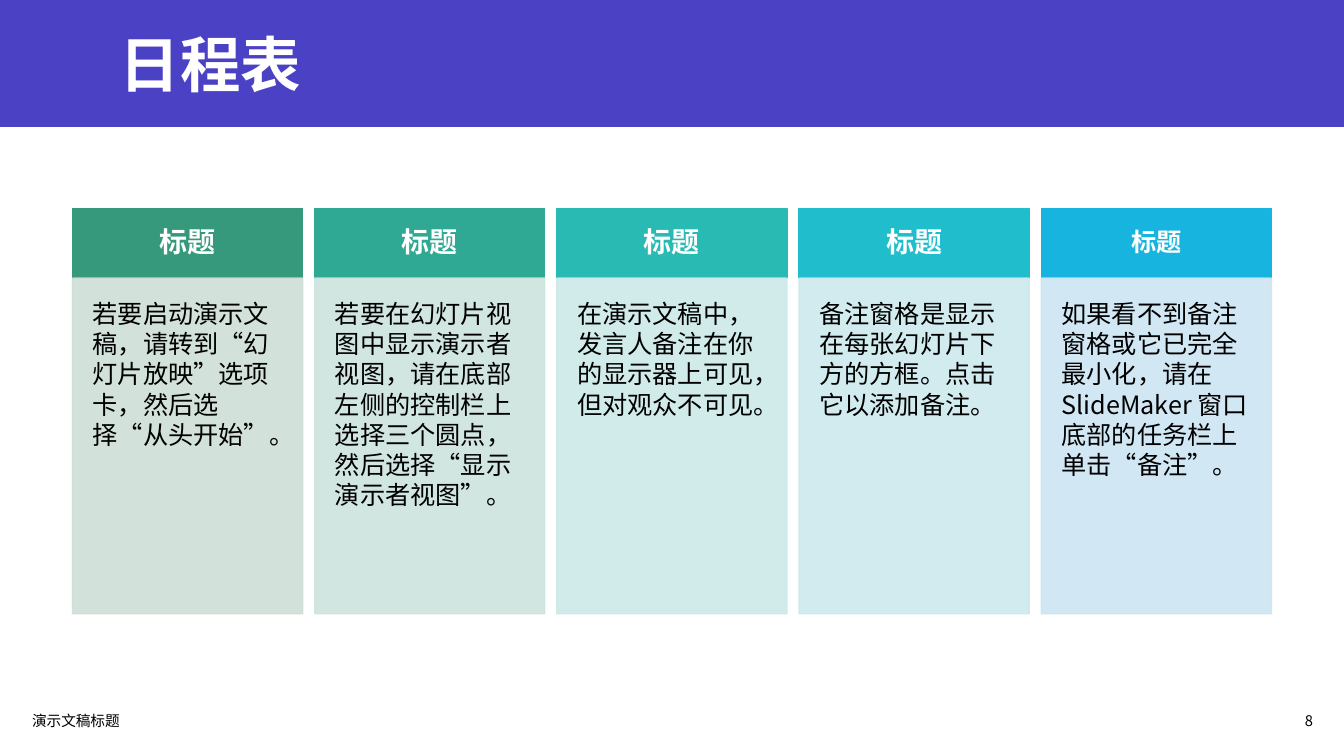
from dataclasses import dataclass

from lxml import etree
from pptx import Presentation
from pptx import util as u
from pptx.dml.color import RGBColor
from pptx.enum import shapes, text
from pptx.oxml.ns import qn

FONT = "Noto Sans CJK SC"
SLIDE_WIDTH, SLIDE_HEIGHT = 13.33, 7.5
MARGIN, GAP = 0.72, 0.12
HEADING_TOP, HEADING_HEIGHT = 2.07, 0.69
BODY_HEIGHT = 3.33
FOOTER_TOP, FOOTER_HEIGHT = 6.95, 0.4

COLORS = {
    "banner": "4A41C5",
    "light": "FFFFFF",
    "dark": "000000",
    "green": "37997B",
    "green_pale": "CEDED7",
    "jade": "30A994",
    "jade_pale": "CDE4DE",
    "teal": "29BAB4",
    "teal_pale": "CCE9E8",
    "cyan": "20BECC",
    "cyan_pale": "CCE9EE",
    "blue": "17B4DF",
    "blue_pale": "CCE5F3",
}


@dataclass(frozen=True)
class Box:
    left: float
    top: float
    width: float
    height: float

    def emu(self) -> list[int]:
        return [u.Inches(n) for n in (self.left, self.top, self.width, self.height)]


@dataclass(frozen=True)
class Style:
    size: float
    color: str = "dark"
    bold: bool = False
    align: text.PP_ALIGN = text.PP_ALIGN.LEFT
    anchor: text.MSO_ANCHOR = text.MSO_ANCHOR.MIDDLE
    inset: float = 0.1
    spacing: float = 1.0


@dataclass(frozen=True)
class Step:
    color: str
    body: str
    heading: str = "标题"
    heading_size: float = 20


STEPS = [
    Step("green", "若要启动演示文稿，请转到“幻灯片放映”选项卡，然后选择“从头开始”。"),
    Step("jade", "若要在幻灯片视图中显示演示者视图，请在底部左侧的控制栏上选择三个圆点，"
                 "然后选择“显示演示者视图”。"),
    Step("teal", "在演示文稿中，发言人备注在你的显示器上可见，但对观众不可见。"),
    Step("cyan", "备注窗格是显示在每张幻灯片下方的方框。点击它以添加备注。"),
    Step("blue", "如果看不到备注窗格或它已完全最小化，请在 SlideMaker 窗口底部的任务栏上"
                 "单击“备注”。", heading_size=18),
]


def write(shape, words: str, style: Style) -> None:
    frame = shape.text_frame
    frame.word_wrap = True
    frame.vertical_anchor = style.anchor
    frame.margin_left = frame.margin_right = u.Inches(style.inset)
    frame.margin_top = frame.margin_bottom = u.Inches(min(style.inset, 0.2))
    paragraph = frame.paragraphs[0]
    paragraph.text = words
    paragraph.alignment = style.align
    paragraph.line_spacing = style.spacing
    font = paragraph.font
    font.name, font.size, font.bold = FONT, u.Pt(style.size), style.bold
    font.color.rgb = RGBColor.from_string(COLORS[style.color])
    defaults = paragraph._p.pPr.find(qn("a:defRPr"))
    defaults.set("lang", "zh-CN")
    etree.SubElement(defaults, qn("a:ea"), typeface=FONT)


def add_label(slide, box: Box, words: str, style: Style) -> None:
    write(slide.shapes.add_textbox(*box.emu()), words, style)


def add_panel(slide, box: Box, color: str, opacity: int = 100, outlined: bool = True):
    panel = slide.shapes.add_shape(shapes.MSO_SHAPE.RECTANGLE, *box.emu())
    panel.shadow.inherit = False
    panel.fill.solid()
    panel.fill.fore_color.rgb = RGBColor.from_string(COLORS[color])
    if outlined:
        panel.line.width = u.Pt(1)
        panel.line.color.rgb = RGBColor.from_string(COLORS[color])
    else:
        panel.line.fill.background()
    if opacity < 100:
        for tint in panel._element.spPr.iter(qn("a:srgbClr")):
            etree.SubElement(tint, qn("a:alpha"), val=str(opacity * 1000))
    return panel


def add_step(slide, step: Step, left: float, width: float) -> None:
    heading = add_panel(slide, Box(left, HEADING_TOP, width, HEADING_HEIGHT), step.color)
    write(heading, step.heading,
          Style(step.heading_size, "light", True, text.PP_ALIGN.CENTER,
                inset=0.18, spacing=0.9))
    body_top = HEADING_TOP + HEADING_HEIGHT
    body = add_panel(slide, Box(left, body_top, width, BODY_HEIGHT),
                     f"{step.color}_pale", opacity=90)
    write(body, step.body, Style(18, anchor=text.MSO_ANCHOR.TOP, inset=0.2))


def main() -> None:
    deck = Presentation()
    deck.slide_width, deck.slide_height = u.Inches(SLIDE_WIDTH), u.Inches(SLIDE_HEIGHT)
    slide = deck.slides.add_slide(deck.slide_layouts[6])

    add_panel(slide, Box(0, 0, SLIDE_WIDTH, 1.26), "banner", outlined=False)
    add_label(slide, Box(1.09, 0.21, 10.96, 0.83), "日程表", Style(43.2, "light", True))

    width = (SLIDE_WIDTH - 2 * MARGIN - GAP * (len(STEPS) - 1)) / len(STEPS)
    for column, step in enumerate(STEPS):
        add_step(slide, step, MARGIN + column * (width + GAP), width)

    add_label(slide, Box(0.22, FOOTER_TOP, 5.29, FOOTER_HEIGHT), "演示文稿标题", Style(10.5))
    add_label(slide, Box(12.43, FOOTER_TOP, 0.69, FOOTER_HEIGHT), "8",
              Style(10.5, align=text.PP_ALIGN.RIGHT))
    deck.save("out.pptx")


if __name__ == "__main__":
    main()
